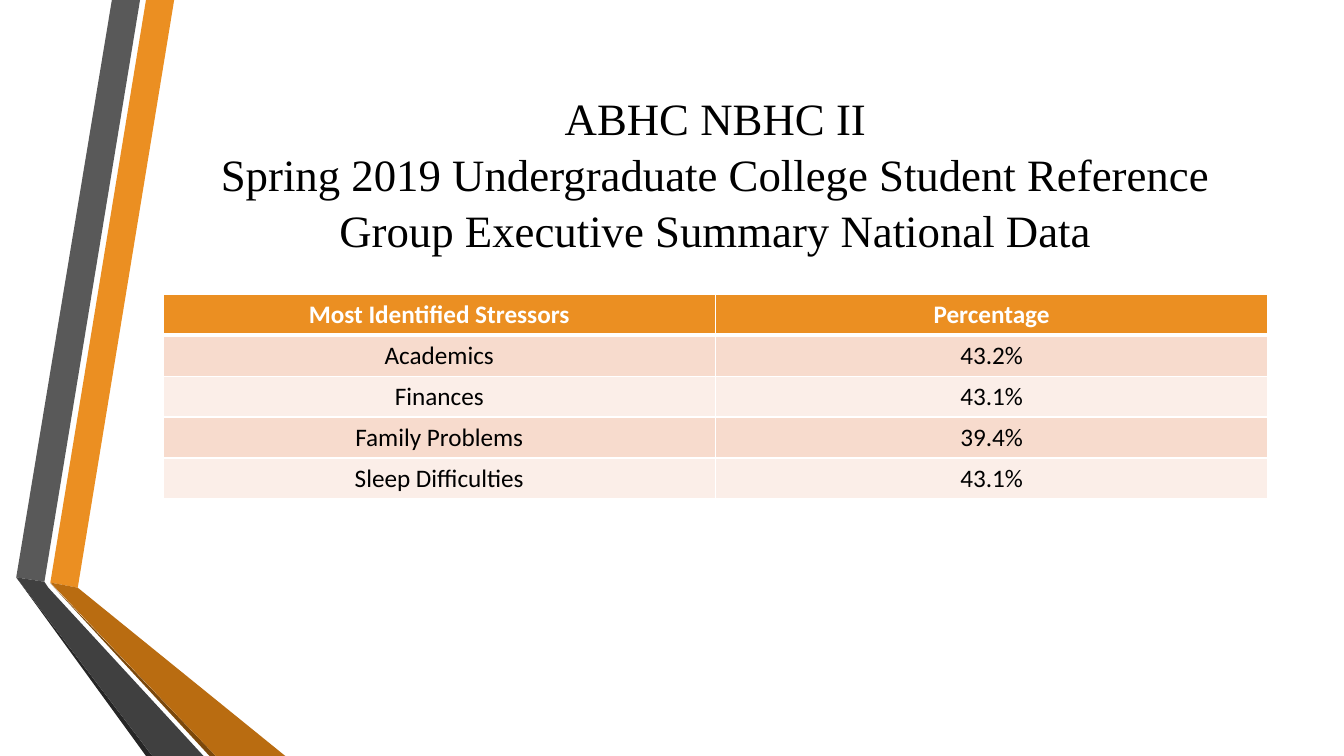
from dataclasses import dataclass

from lxml.etree import SubElement
from pptx import Presentation
from pptx.dml.color import RGBColor
from pptx.enum.text import MSO_ANCHOR, MSO_AUTO_SIZE, PP_ALIGN
from pptx.oxml.ns import qn
from pptx.util import Cm, Pt


@dataclass(frozen=True)
class Theme:
    orange: str = "EB8F22"
    orange_dark: str = "B96C11"
    orange_edge: str = "7B480B"
    gray: str = "595959"
    gray_dark: str = "404040"
    gray_edge: str = "262626"
    bands: tuple = ("F7DBCD", "FBEEE8")
    black: str = "000000"
    white: str = "FFFFFF"
    title_font: str = "Times New Roman"
    body_font: str = "Calibri"
    title_size: int = 32
    body_size: int = 18


def format_run(r, color, **font_values):
    for name, value in font_values.items():
        setattr(r.font, name, value)
    r.font.color.rgb = RGBColor.from_string(color)


def set_border(cell, side, width):
    """Draw one side ("L", "R", "T" or "B") of a cell as a white line."""
    ln = SubElement(cell._tc.get_or_add_tcPr(), qn(f"a:ln{side}"), w=str(Pt(width)))
    fill = SubElement(ln, qn("a:solidFill"))
    SubElement(fill, qn("a:srgbClr"), val=theme.white)


theme = Theme()
prs = Presentation()
prs.slide_width, prs.slide_height = Cm(33.87), Cm(19.05)
s = prs.slides.add_slide(prs.slide_layouts[5])

# Folded ribbons, corner points in cm
ribbons = [
    (theme.orange, [(1.27, 14.68), (1.96, 14.81), (4.39, 0), (3.68, 0)]),
    (theme.gray, [(3.53, 0), (2.82, 0), (0.41, 14.55), (1.12, 14.66)]),
    (theme.gray_edge, [(0.41, 14.55), (3.68, 19.05), (3.84, 19.05)]),
    (theme.orange_edge, [(1.27, 14.7), (5.28, 19.05), (5.44, 19.05)]),
    (theme.orange_dark, [(1.27, 14.68), (5.44, 19.05), (7.19, 19.05), (1.96, 14.81)]),
    (theme.gray_dark, [(5.13, 19.05), (1.22, 14.81), (1.12, 14.66), (0.41, 14.55),
                       (3.84, 19.05)]),
]
for color, corners in ribbons:
    points = [(Cm(x), Cm(y)) for x, y in corners]
    builder = s.shapes.build_freeform(*points[0])
    builder.add_line_segments(points[1:], close=True)
    sp = builder.convert_to_shape()
    sp.shadow.inherit = False
    sp.fill.solid()
    sp.fill.fore_color.rgb = RGBColor.from_string(color)
    sp.line.fill.background()

# Title
title = s.shapes.title
title.left, title.top, title.width, title.height = Cm(4.11), Cm(1.91), Cm(27.84), Cm(4.88)
tf = title.text_frame
tf.word_wrap, tf.auto_size = True, MSO_AUTO_SIZE.NONE
tf.vertical_anchor = MSO_ANCHOR.MIDDLE
p = tf.paragraphs[0]
p.text = ("ABHC NBHC II\vSpring 2019 Undergraduate College Student Reference "
          "Group Executive Summary National Data")
p.alignment, p.line_spacing = PP_ALIGN.CENTER, 1.04
for r in p.runs:
    format_run(r, theme.black, name=theme.title_font, size=Pt(theme.title_size))

# Stressor table
rows = [
    ("Most Identified Stressors", "Percentage"),
    ("Academics", "43.2%"),
    ("Finances", "43.1%"),
    ("Family Problems", "39.4%"),
    ("Sleep Difficulties", "43.1%"),
]
table = s.shapes.add_table(len(rows), 2, Cm(4.11), Cm(7.42), Cm(27.84), Cm(5.15)).table
for i, row in enumerate(rows):
    header = i == 0
    for j, text in enumerate(row):
        cell = table.cell(i, j)
        for side in "LRTB":
            heavy = (header and side == "B") or (i == 1 and side == "T")
            set_border(cell, side, 3 if heavy else 1)
        cell.fill.solid()
        cell.fill.fore_color.rgb = RGBColor.from_string(
            theme.orange if header else theme.bands[(i - 1) % 2])
        p = cell.text_frame.paragraphs[0]
        p.alignment = PP_ALIGN.CENTER
        r = p.add_run()
        r.text = text
        format_run(r, theme.white if header else theme.black, name=theme.body_font,
                   size=Pt(theme.body_size), bold=header)

prs.save("out.pptx")
